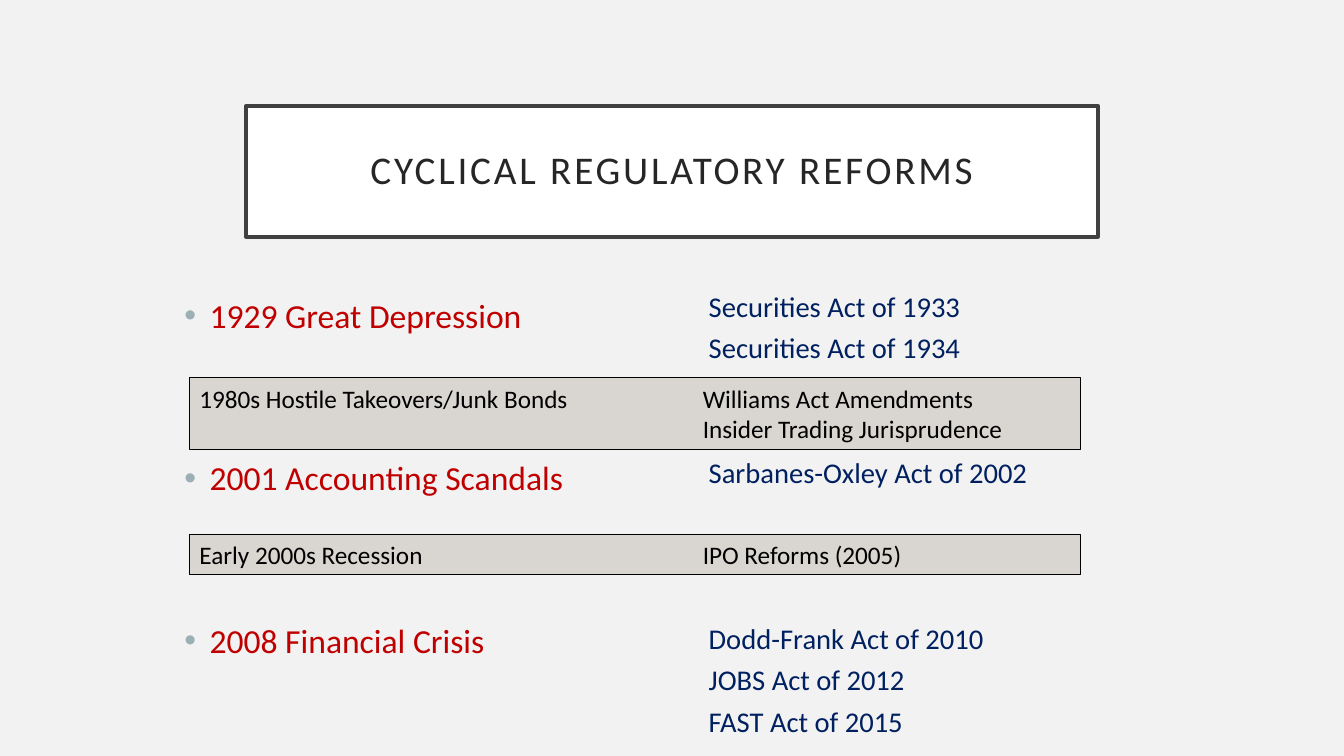
from dataclasses import dataclass
from lxml.etree import SubElement
from pptx import Presentation
from pptx.dml.color import RGBColor
from pptx.enum.shapes import MSO_SHAPE
from pptx.enum.text import MSO_ANCHOR, PP_ALIGN
from pptx.oxml.ns import qn
from pptx.util import Inches, Pt


@dataclass(frozen=True)
class Theme:
    font: str = "Calibri"
    back: str = "F2F2F2"
    white: str = "FFFFFF"
    frame: str = "404040"
    title: str = "262626"
    event: str = "C00000"
    law: str = "002060"
    dot: str = "9BAFB5"
    band: str = "D9D6D1"
    black: str = "000000"
    head: float = 28
    large: float = 24
    mid: float = 20.4
    small: float = 18


theme = Theme()
rgb = RGBColor.from_string
deck = Presentation()
deck.slide_width, deck.slide_height = Inches(13.33), Inches(7.5)
wide, high = deck.slide_width, deck.slide_height
slide = deck.slides.add_slide(deck.slide_layouts[6])
slide.background.fill.solid()
slide.background.fill.fore_color.rgb = rgb(theme.back)


def area(left, top, width, height):
    return [int(wide * left / 100), int(high * top / 100),
            int(wide * width / 100), int(high * height / 100)]


def write(shape, lines, size, color, align=PP_ALIGN.LEFT, anchor=MSO_ANCHOR.TOP,
          gaps=None, space=1.0, track=0, dot=None, tab=None):
    frame = shape.text_frame
    frame.word_wrap = True
    frame.vertical_anchor = anchor
    for i, line in enumerate(lines):
        para = frame.paragraphs[0] if i == 0 else frame.add_paragraph()
        para.alignment = align
        para.line_spacing = space
        para.space_before = Pt(gaps[i] if gaps else 0)
        run = para.add_run()
        run.text = line
        run.font.name = theme.font
        run.font.size = Pt(size)
        run.font.color.rgb = rgb(color)
        if track:
            run._r.get_or_add_rPr().set("spc", str(track))
        props = para._p.get_or_add_pPr()
        if dot:
            props.set("marL", str(Inches(0.25)))
            props.set("indent", str(-Inches(0.25)))
            tint = SubElement(props, qn("a:buClr"))
            SubElement(tint, qn("a:srgbClr"), val=dot)
            SubElement(props, qn("a:buFont"), typeface="Arial")
            SubElement(props, qn("a:buChar"), char="•")
        if tab:
            stops = SubElement(props, qn("a:tabLst"))
            SubElement(stops, qn("a:tab"), pos=str(int(tab)), algn="l")


def panel(place, fill, line, weight):
    shape = slide.shapes.add_shape(MSO_SHAPE.RECTANGLE, *place)
    shape.shadow.inherit = False
    shape.fill.solid()
    shape.fill.fore_color.rgb = rgb(fill)
    shape.line.color.rgb = rgb(line)
    shape.line.width = Pt(weight)
    return shape


title = panel(area(18.3, 14, 63.4, 17.33), theme.white, theme.frame, 2.5)
write(title, ["CYCLICAL REGULATORY REFORMS"], theme.head, theme.title,
      align=PP_ALIGN.CENTER, anchor=MSO_ANCHOR.MIDDLE, space=0.9, track=200)

events = ["1929 Great Depression", "2001 Accounting Scandals", "2008 Financial Crisis"]
left = slide.shapes.add_textbox(*area(12.98, 38.4, 35.03, 59.6))
write(left, events, theme.large, theme.event, gaps=[0, 87, 87], dot=theme.dot)

laws = {
    0: "Securities Act of 1933",
    1: "Securities Act of 1934",
    4: "Sarbanes-Oxley Act of 2002",
    8: "Dodd-Frank Act of 2010",
    9: "JOBS Act of 2012",
    10: "FAST Act of 2015",
}
rows = list(laws)
pitch = 29.7
gaps = [0] + [10 + pitch * (b - a - 1) for a, b in zip(rows, rows[1:])]
right = slide.shapes.add_textbox(*area(51.99, 38.4, 35.03, 59.6))
write(right, laws.values(), theme.mid, theme.law, gaps=gaps, space=0.8)

bands = [
    (50, 9.47, ["1980s Hostile Takeovers/Junk Bonds\tWilliams Act Amendments",
                "\tInsider Trading Jurisprudence"]),
    (70.67, 5.33, ["Early 2000s Recession\tIPO Reforms (2005)"]),
]
for top, tall, lines in bands:
    band = panel(area(14.1, top, 66.32, tall), theme.band, theme.black, 0.75)
    write(band, lines, theme.small, theme.black, tab=wide * 37.45 / 100)

deck.save("out.pptx")
